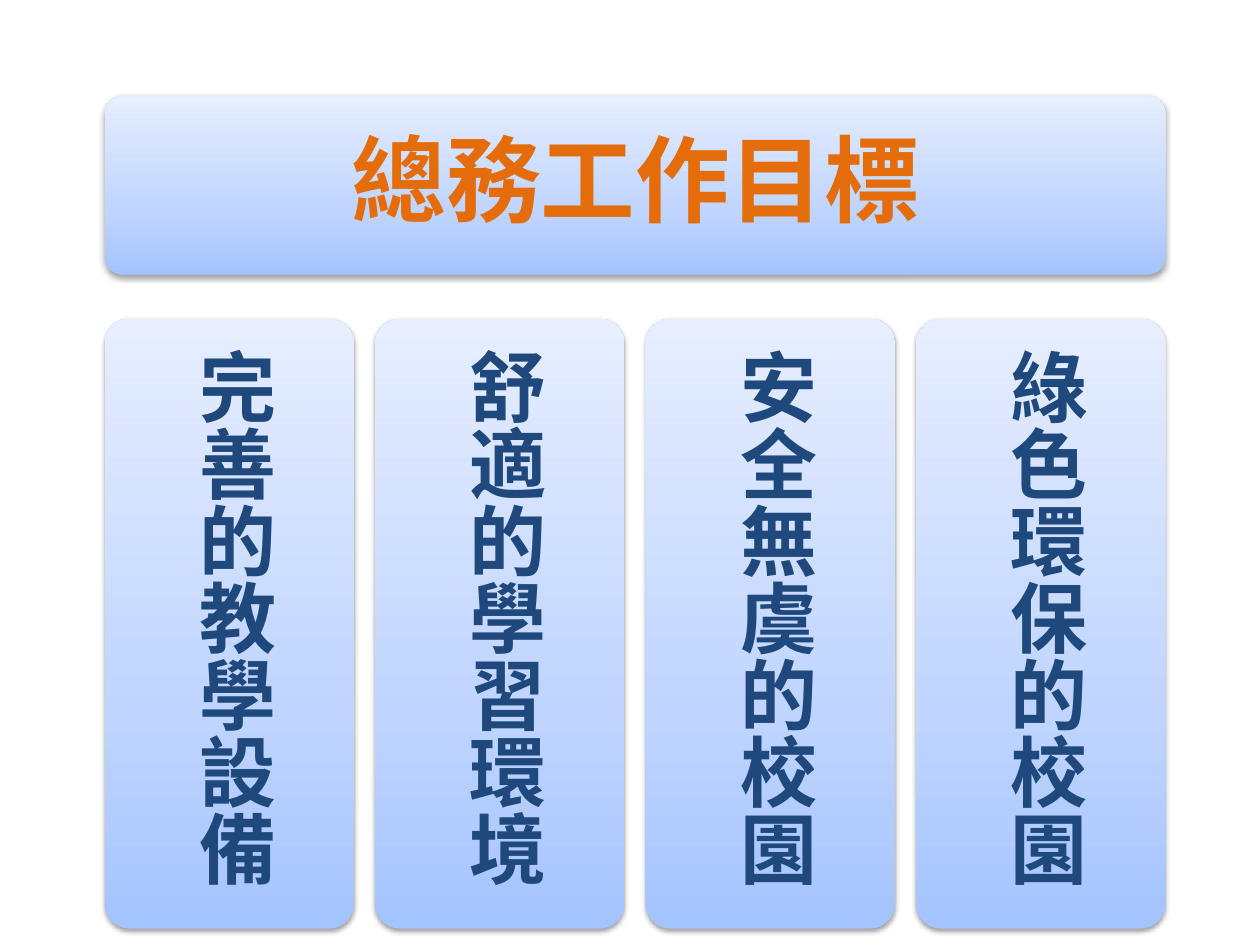
"""Build the slide of general affairs goals: one title banner above four goal columns."""
from copy import deepcopy
from dataclasses import dataclass

from lxml import etree
from pptx import Presentation
from pptx.dml.color import RGBColor
from pptx.enum.shapes import MSO_SHAPE
from pptx.enum.text import MSO_ANCHOR, PP_ALIGN
from pptx.oxml.ns import qn
from pptx.slide import Slide
from pptx.util import Inches, Pt

ROUNDED = MSO_SHAPE.ROUNDED_RECTANGLE
MIDDLE = MSO_ANCHOR.MIDDLE
CENTER = PP_ALIGN.CENTER


@dataclass(frozen=True)
class TextStyle:
    font: str
    size: int
    color: str
    inset: float
    vertical: bool = False


@dataclass(frozen=True)
class Theme:
    heading: TextStyle = TextStyle("Noto Sans CJK SC", 54, "E46C0A", 0.23)
    goal: TextStyle = TextStyle("Noto Sans CJK JP", 44, "1F497D", 0.18, True)
    gradient: tuple = ((0, "A4C4FF"), (0.35, "BFD4FF"), (1, "E6EEFF"))
    shadow: str = "000000"
    shadow_opacity: int = 38
    shadow_blur: float = 3.1
    shadow_distance: float = 1.6
    corner: float = 0.1


@dataclass(frozen=True)
class Box:
    left: float
    top: float
    width: float
    height: float

    def shrink(self, margin: float) -> "Box":
        return Box(self.left + margin, self.top + margin,
                   self.width - 2 * margin, self.height - 2 * margin)

    def lengths(self) -> list[int]:
        return [Inches(n) for n in (self.left, self.top, self.width, self.height)]


THEME = Theme()
CORNER_INSET = 0.29
BANNER = Box(0.83, 0.76, 8.42, 1.42)
GOAL_TOP, GOAL_WIDTH, GOAL_HEIGHT = 2.53, 1.98, 4.84
HEADING = "總務工作目標"
GOALS = ("完善的教學設備", "舒適的學習環境", "安全無虞的校園", "綠色環保的校園")


def add_panel(slide: Slide, box: Box) -> None:
    panel = slide.shapes.add_shape(ROUNDED, *box.lengths())
    panel.adjustments[0] = THEME.corner
    panel.line.fill.background()
    panel.fill.gradient()
    panel.fill.gradient_angle = 90
    stop_list = panel._element.spPr.find(".//" + qn("a:gsLst"))
    stop_list.insert(1, deepcopy(stop_list[0]))
    for stop, (position, color) in zip(panel.fill.gradient_stops, THEME.gradient):
        stop.position = position
        stop.color.rgb = RGBColor.from_string(color)
    panel.shadow.inherit = False
    effects = panel._element.spPr.find(qn("a:effectLst"))
    shadow = etree.SubElement(
        effects, qn("a:outerShdw"), blurRad=str(Pt(THEME.shadow_blur)),
        dist=str(Pt(THEME.shadow_distance)), dir="5400000", rotWithShape="0")
    color = etree.SubElement(shadow, qn("a:srgbClr"), val=THEME.shadow)
    etree.SubElement(color, qn("a:alpha"), val=str(THEME.shadow_opacity * 1000))


def add_label(slide: Slide, box: Box, text: str, style: TextStyle) -> None:
    frame = slide.shapes.add_textbox(*box.lengths()).text_frame
    frame.word_wrap = True
    frame.vertical_anchor = MIDDLE
    frame.margin_left = frame.margin_right = Inches(style.inset)
    frame.margin_top = frame.margin_bottom = Inches(style.inset)
    if style.vertical:
        frame._txBody.bodyPr.set("vert", "eaVert")
    paragraph = frame.paragraphs[0]
    paragraph.text = text
    paragraph.alignment = CENTER
    paragraph.line_spacing = 0.9
    font = paragraph.font
    font.name, font.size, font.bold = style.font, Pt(style.size), True
    font.color.rgb = RGBColor.from_string(style.color)
    properties = paragraph._p.pPr.find(qn("a:defRPr"))
    etree.SubElement(properties, qn("a:ea"), typeface=style.font)


def add_card(slide: Slide, box: Box, text: str, style: TextStyle) -> None:
    add_panel(slide, box)
    margin = CORNER_INSET * THEME.corner * min(box.width, box.height)
    add_label(slide, box.shrink(margin), text, style)


def main() -> None:
    deck = Presentation()
    deck.slide_width, deck.slide_height = Inches(10), Inches(7.5)
    slide = deck.slides.add_slide(deck.slide_layouts[6])
    add_card(slide, BANNER, HEADING, THEME.heading)
    pitch = (BANNER.width - GOAL_WIDTH) / (len(GOALS) - 1)
    for column, goal in enumerate(GOALS):
        box = Box(BANNER.left + column * pitch, GOAL_TOP, GOAL_WIDTH, GOAL_HEIGHT)
        add_card(slide, box, goal, THEME.goal)
    deck.save("out.pptx")


if __name__ == "__main__":
    main()
